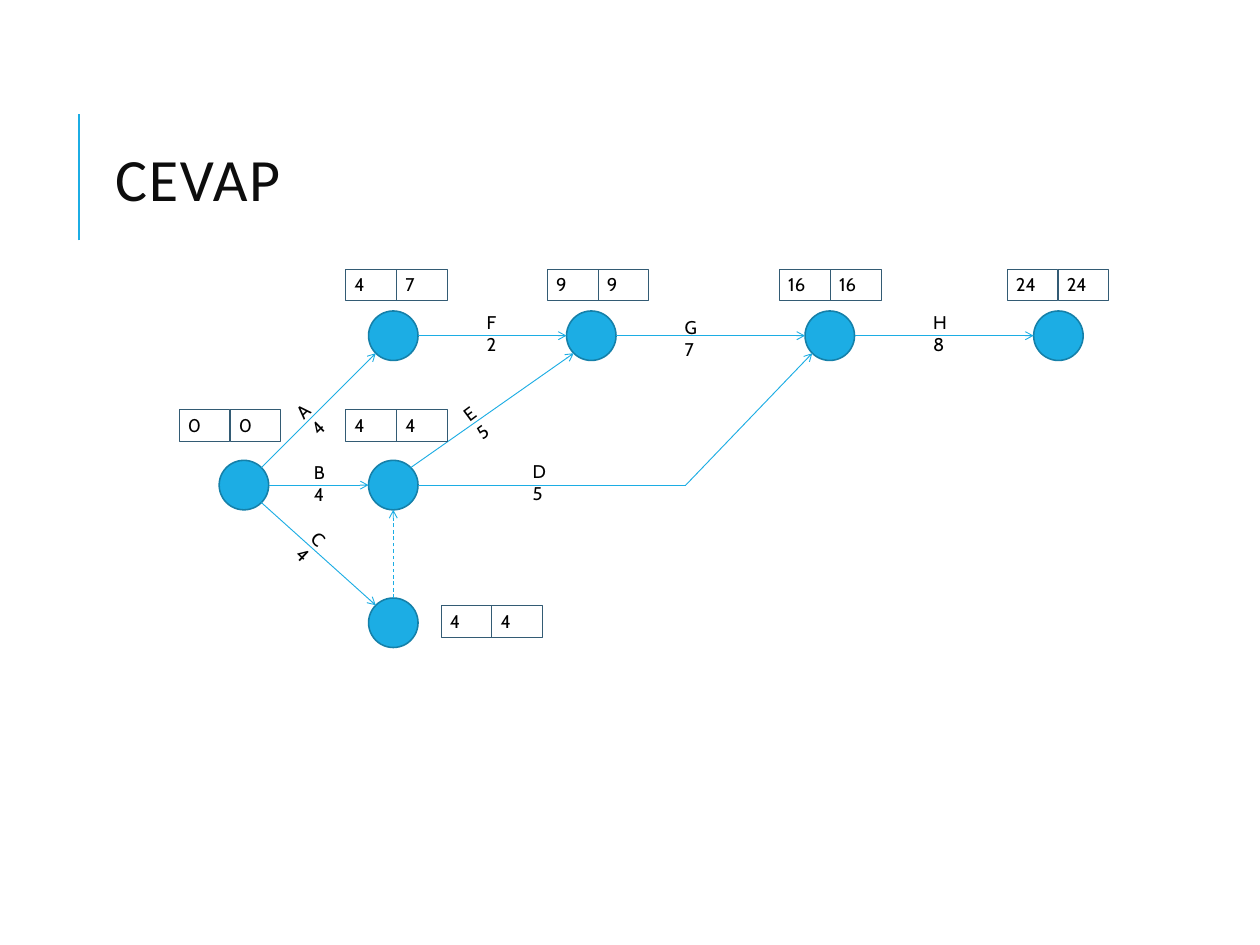
from math import hypot

from pptx import Presentation
from pptx.dml.color import RGBColor
from pptx.enum.dml import MSO_LINE
from pptx.enum.shapes import MSO_CONNECTOR, MSO_SHAPE
from pptx.enum.text import MSO_ANCHOR, MSO_AUTO_SIZE, PP_ALIGN
from pptx.oxml.ns import qn
from pptx.util import Inches, Pt
from lxml.etree import SubElement

BLUE = "1CADE4"
DIAMETER = 0.55
CELL_WIDTH, CELL_HEIGHT = 0.565, 0.35


def color(hex_string):
    return RGBColor.from_string(hex_string)


def add_line(start, end, width=0.75, arrow=True, dashed=False):
    line = page.shapes.add_connector(
        MSO_CONNECTOR.STRAIGHT, *[Inches(value) for value in (*start, *end)])
    line.line.color.rgb = color(BLUE)
    line.line.width = Pt(width)
    if dashed:
        line.line.dash_style = MSO_LINE.DASH
    if arrow:
        SubElement(line.line._get_or_add_ln(), qn("a:tailEnd"), type="arrow")
    SubElement(line._element.spPr, qn("a:effectLst"))


deck = Presentation()
deck.slide_width, deck.slide_height = Inches(14), Inches(10.5)
page = deck.slides.add_slide(deck.slide_layouts[5])

# Title with its accent line
add_line((0.88, 2.67), (0.88, 1.27), width=1.5, arrow=False)
title = page.shapes.title
title.left, title.top = Inches(1.18), Inches(0.9)
title.width, title.height = Inches(11.16), Inches(2.3)
title.text_frame.auto_size = MSO_AUTO_SIZE.NONE
title.text_frame.vertical_anchor = MSO_ANCHOR.MIDDLE
para = title.text_frame.paragraphs[0]
para.alignment = PP_ALIGN.LEFT
para.line_spacing = 0.8
span = para.add_run()
span.text = "CEVAP"
span.font.size = Pt(48)
span.font.name = "Calibri"
span.font.color.rgb = color("0D0D0D")
span.font._element.set("spc", "140")

# Events: the centre of each circle
events = {
    "start": (2.71, 5.39),
    "after A": (4.37, 3.73),
    "after C": (4.37, 6.92),
    "after B": (4.37, 5.39),
    "after E": (6.57, 3.73),
    "after G": (9.22, 3.73),
    "end": (11.76, 3.73),
}
for x, y in events.values():
    circle = page.shapes.add_shape(
        MSO_SHAPE.OVAL, Inches(x - DIAMETER / 2), Inches(y - DIAMETER / 2),
        Inches(DIAMETER), Inches(DIAMETER))
    circle.shadow.inherit = False
    circle.fill.solid()
    circle.fill.fore_color.rgb = color(BLUE)
    circle.line.color.rgb = color("1580A9")
    circle.line.width = Pt(1.25)

# Activities: event and compass direction where each arrow leaves and arrives
right, left, up, down = (1, 0), (-1, 0), (0, -1), (0, 1)
up_right, down_right, up_left, down_left = (1, -1), (1, 1), (-1, -1), (-1, 1)
events["bend"] = (7.62, 5.39)
at_bend = (0, 0)
activities = [
    ("start", up_right, "after A", down_left),
    ("start", right, "after B", left),
    ("start", down_right, "after C", up_left),
    ("after A", right, "after E", left),
    ("after E", right, "after G", left),
    ("after G", right, "end", left),
    ("after B", up_right, "after E", down_left),
    ("after C", up, "after B", down),
    ("after B", right, "bend", at_bend),
    ("bend", at_bend, "after G", down_left),
]
for source, leaving, target, arriving in activities:
    ends = []
    for event, direction in ((source, leaving), (target, arriving)):
        reach = DIAMETER / 2 / (hypot(*direction) or 1)
        ends.append([centre + reach * step
                     for centre, step in zip(events[event], direction)])
    add_line(*ends, arrow=target != "bend", dashed=source == "after C")

# Activity names above their durations: left, top, rotation
labels = [
    ("B", "4", 3.39, 5.07, 0),
    ("A", "4", 3.23, 4.21, 316),
    ("C", "4", 3.23, 5.94, 43.3),
    ("F", "2", 5.31, 3.41, 0),
    ("D", "5", 5.82, 5.06, 0),
    ("G", "7", 7.51, 3.46, 0),
    ("H", "8", 10.27, 3.41, 0),
    ("E", "5", 5.09, 4.26, 323.3),
]
text_shapes = []
for name, duration, x, y, rotation in labels:
    box = page.shapes.add_textbox(Inches(x), Inches(y), Inches(0.77), Inches(0.6))
    box.rotation = rotation
    text_shapes.append((box, (name, duration)))

# Earliest and latest times: left and top of each pair of cells
times = [
    ("0", "0", 1.99, 4.55),
    ("4", "7", 3.84, 2.99),
    ("9", "9", 6.08, 2.99),
    ("16", "16", 8.66, 2.99),
    ("24", "24", 11.19, 2.99),
    ("4", "4", 3.84, 4.55),
    ("4", "4", 4.9, 6.73),
]
for earliest, latest, x, y in times:
    for column, time in enumerate((earliest, latest)):
        cell = page.shapes.add_shape(
            MSO_SHAPE.RECTANGLE, Inches(x + column * CELL_WIDTH), Inches(y),
            Inches(CELL_WIDTH), Inches(CELL_HEIGHT))
        cell.shadow.inherit = False
        cell.fill.background()
        cell.line.color.rgb = color("335B74")
        cell.line.width = Pt(0.75)
        text_shapes.append((cell, (time,)))

for shape, lines in text_shapes:
    frame = shape.text_frame
    frame.word_wrap = True
    frame.auto_size = MSO_AUTO_SIZE.SHAPE_TO_FIT_TEXT
    frame.vertical_anchor = MSO_ANCHOR.TOP
    for index, line in enumerate(lines):
        para = frame.add_paragraph() if index else frame.paragraphs[0]
        para.alignment = PP_ALIGN.LEFT
        span = para.add_run()
        span.text = line
        span.font.size = Pt(14.7)
        span.font.name = "Cabin"
        span.font.color.rgb = color("000000")

deck.save("out.pptx")
